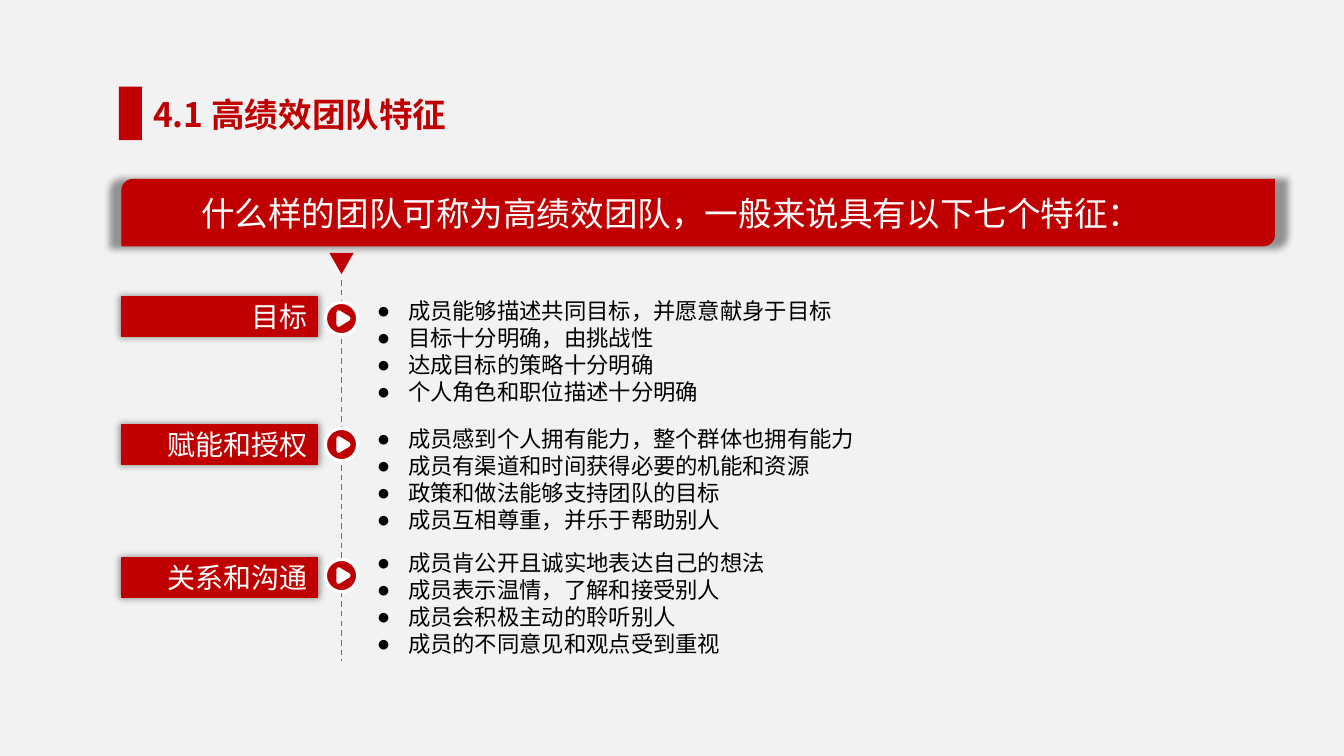
import pptx
import pptx.util
import pptx.dml.color
import pptx.enum.dml
import pptx.enum.shapes
import pptx.enum.text
import pptx.oxml.ns
import lxml.etree

Inches = pptx.util.Inches
Pt = pptx.util.Pt
RGBColor = pptx.dml.color.RGBColor
MSO_SHAPE = pptx.enum.shapes.MSO_SHAPE
PP_ALIGN = pptx.enum.text.PP_ALIGN
MSO_ANCHOR = pptx.enum.text.MSO_ANCHOR
qn = pptx.oxml.ns.qn

RED = RGBColor(0xC0, 0x00, 0x00)
WHITE = RGBColor(0xFF, 0xFF, 0xFF)
BLACK = RGBColor(0x00, 0x00, 0x00)
GRAY = RGBColor(0x71, 0x6F, 0x6E)
BACKGROUND = RGBColor(0xF2, 0xF2, 0xF2)
CHINESE_FONT = "Noto Sans CJK SC"

TITLE = "4.1 高绩效团队特征"
BANNER = "什么样的团队可称为高绩效团队，一般来说具有以下七个特征："
FEATURES = [
    {"label": "目标", "label_top": 2.94, "circle_top": 3.0, "list_top": 2.9, "list_width": 5.31,
     "points": ["成员能够描述共同目标，并愿意献身于目标", "目标十分明确，由挑战性",
                "达成目标的策略十分明确", "个人角色和职位描述十分明确"]},
    {"label": "赋能和授权", "label_top": 4.21, "circle_top": 4.25, "list_top": 4.17, "list_width": 6.59,
     "points": ["成员感到个人拥有能力，整个群体也拥有能力", "成员有渠道和时间获得必要的机能和资源",
                "政策和做法能够支持团队的目标", "成员互相尊重，并乐于帮助别人"]},
    {"label": "关系和沟通", "label_top": 5.53, "circle_top": 5.55, "list_top": 5.4, "list_width": 6.48,
     "points": ["成员肯公开且诚实地表达自己的想法", "成员表示温情，了解和接受别人",
                "成员会积极主动的聆听别人", "成员的不同意见和观点受到重视"]},
]
POINTER = [(3.27, 2.51), (3.51, 2.51), (3.39, 2.72)]
PLAY_ARROW = [(0.11, 0.1), (0.12, 0.08), (0.14, 0.08), (0.19, 0.11), (0.24, 0.14), (0.25, 0.16),
              (0.24, 0.18), (0.19, 0.21), (0.14, 0.24), (0.12, 0.24), (0.11, 0.22)]


def place(shape, left, top, width, height):
    shape.left, shape.top = Inches(left), Inches(top)
    shape.width, shape.height = Inches(width), Inches(height)


def add_run(paragraph, text, size, color, latin=CHINESE_FONT, bold=False):
    run = paragraph.add_run()
    run.text = text
    run.font.size, run.font.bold, run.font.name = Pt(size), bold, latin
    run.font.color.rgb = color
    east_asian = lxml.etree.Element(qn("a:ea"), typeface=CHINESE_FONT)
    run.font._element.find(qn("a:latin")).addnext(east_asian)


def set_frame(shape, anchor):
    frame = shape.text_frame
    frame.word_wrap = True
    frame.auto_size = pptx.enum.text.MSO_AUTO_SIZE.NONE
    frame.vertical_anchor = anchor
    frame.margin_left = frame.margin_right = Inches(0.1)
    frame.margin_top = frame.margin_bottom = Inches(0.05)
    return frame


def add_soft_shadow(shape):
    effects = lxml.etree.SubElement(shape._element.spPr, qn("a:effectLst"))
    shadow = lxml.etree.SubElement(effects, qn("a:outerShdw"), blurRad=str(Pt(5)),
                                   sx="102000", sy="102000", algn="ctr", rotWithShape="0")
    color = lxml.etree.SubElement(shadow, qn("a:srgbClr"), val=str(BLACK))
    lxml.etree.SubElement(color, qn("a:alpha"), val="40000")


def paint(shape, fill, line=None, line_width=0.75, soft_shadow=False):
    shape.fill.solid()
    shape.fill.fore_color.rgb = fill
    if line is None:
        shape.line.fill.background()
    else:
        shape.line.color.rgb = line
        shape.line.width = Pt(line_width)
    if soft_shadow:
        add_soft_shadow(shape)
    else:
        shape.shadow.inherit = False


def add_preset(shapes, kind, left, top, width, height):
    return shapes.add_shape(kind, Inches(left), Inches(top), Inches(width), Inches(height))


def add_outline(shapes, points, fill):
    vertices = [(Inches(x), Inches(y)) for x, y in points]
    builder = shapes.build_freeform(*vertices[0])
    builder.add_line_segments(vertices[1:], close=True)
    paint(builder.convert_to_shape(), fill)


def add_bullet(paragraph):
    properties = paragraph._element.get_or_add_pPr()
    properties.set("marL", str(Inches(0.31)))
    properties.set("indent", str(Inches(-0.31)))
    lxml.etree.SubElement(properties, qn("a:buFont"), typeface="Arial")
    lxml.etree.SubElement(properties, qn("a:buChar"), char="●")


def fill_list(placeholder, feature):
    place(placeholder, 3.64, feature["list_top"], feature["list_width"], 1.17)
    frame = set_frame(placeholder, MSO_ANCHOR.TOP)
    for index, point in enumerate(feature["points"]):
        paragraph = frame.add_paragraph() if index else frame.paragraphs[0]
        add_bullet(paragraph)
        paragraph.alignment = PP_ALIGN.JUSTIFY
        paragraph.space_before = Pt(0)
        paragraph.line_spacing = Pt(19.2)
        add_run(paragraph, point, 16, BLACK)


def add_label(shapes, feature):
    label = add_preset(shapes, MSO_SHAPE.RECTANGLE, 1.21, feature["label_top"], 1.94, 0.4)
    paint(label, RED, RED, soft_shadow=True)
    paragraph = set_frame(label, MSO_ANCHOR.MIDDLE).paragraphs[0]
    paragraph.alignment = PP_ALIGN.RIGHT
    add_run(paragraph, feature["label"], 20, WHITE, latin="Arial")


def add_play_button(shapes, left, top):
    button = shapes.add_group_shape()
    circle = add_preset(button.shapes, MSO_SHAPE.OVAL, left, top, 0.32, 0.32)
    paint(circle, RED, WHITE, 2.25)
    add_outline(button.shapes, [(left + x, top + y) for x, y in PLAY_ARROW], WHITE)


def main():
    presentation = pptx.Presentation()
    presentation.slide_width, presentation.slide_height = Inches(13.34), Inches(7.5)
    slide = presentation.slides.add_slide(presentation.slide_layouts.get_by_name("Comparison"))
    slide.background.fill.solid()
    slide.background.fill.fore_color.rgb = BACKGROUND
    shapes = slide.shapes

    title, *bodies = list(slide.placeholders)
    place(title, 1.42, 0.88, 5.12, 0.5)
    paragraph = set_frame(title, MSO_ANCHOR.MIDDLE).paragraphs[0]
    paragraph.alignment = PP_ALIGN.LEFT
    add_run(paragraph, TITLE, 24, RED, bold=True)
    paint(add_preset(shapes, MSO_SHAPE.RECTANGLE, 1.18, 0.86, 0.23, 0.53), RED)

    banner = add_preset(shapes, MSO_SHAPE.ROUND_2_DIAG_RECTANGLE, 1.21, 1.78, 11.44, 0.66)
    paint(banner, RED, RED, soft_shadow=True)
    frame = set_frame(banner, MSO_ANCHOR.MIDDLE)
    frame.margin_right = Inches(0.63)
    frame.paragraphs[0].alignment = PP_ALIGN.CENTER
    add_run(frame.paragraphs[0], BANNER, 24, WHITE)

    timeline = shapes.add_connector(pptx.enum.shapes.MSO_CONNECTOR.STRAIGHT,
                                    Inches(3.39), Inches(2.78), Inches(3.39), Inches(6.56))
    timeline.line.color.rgb = GRAY
    timeline.line.width = Pt(1)
    timeline.line.dash_style = pptx.enum.dml.MSO_LINE.DASH
    lxml.etree.SubElement(timeline._element.spPr, qn("a:effectLst"))
    add_outline(shapes, POINTER, RED)

    for feature, body in zip(FEATURES, bodies):
        add_label(shapes, feature)
        add_play_button(shapes, 3.23, feature["circle_top"])
        fill_list(body, feature)
    for unused in bodies[len(FEATURES):]:
        unused._element.getparent().remove(unused._element)

    presentation.save("out.pptx")


if __name__ == "__main__":
    main()
